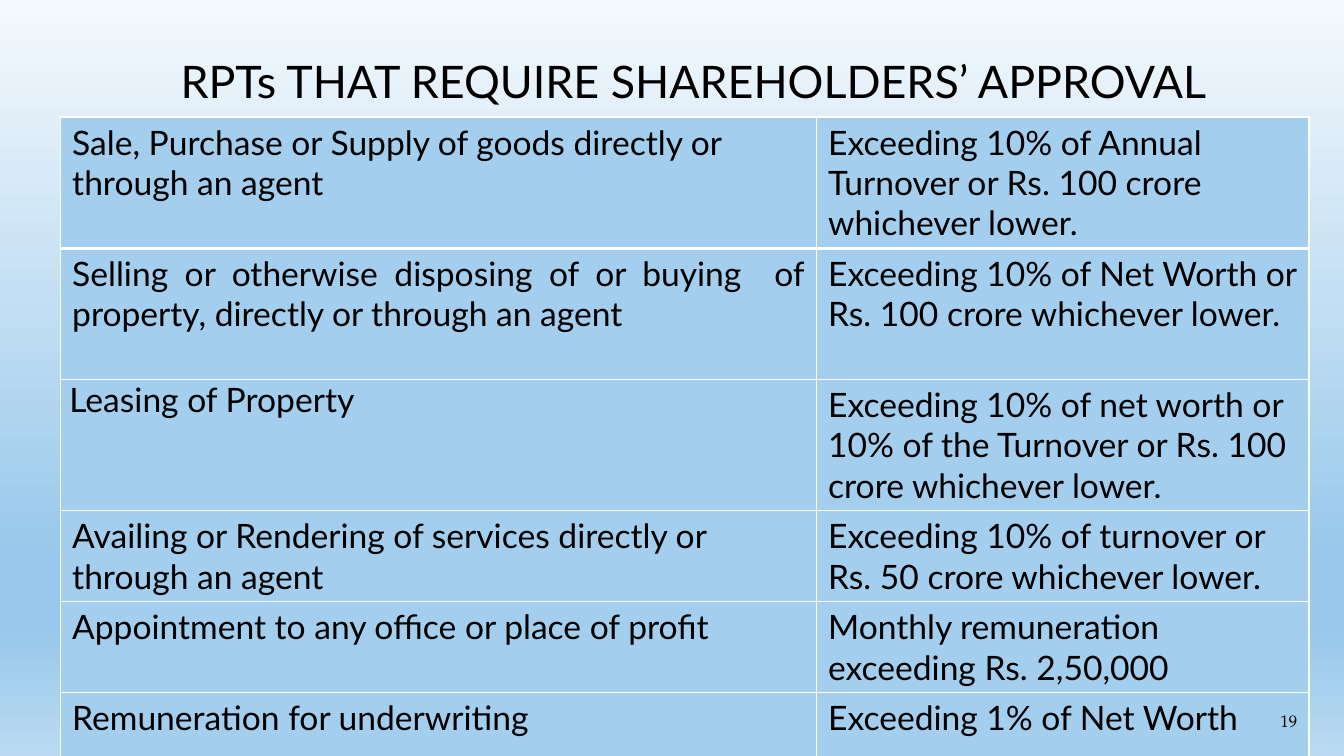
from dataclasses import dataclass
from typing import Optional

from lxml.etree import SubElement
from pptx import Presentation
from pptx.dml.color import RGBColor as Rgb
from pptx.enum.text import MSO_ANCHOR as Anchor, PP_ALIGN as Align
from pptx.oxml.ns import qn
from pptx.util import Cm, Pt

COLORS = {
    "ink": "000000",
    "cell": "A3CEED",
    "line": "FFFFFF",
    "top": "F4F9FD",
    "mid": "98C8EB",
    "base": "BADAF2",
}
STOPS = [(0, "top"), (74, "mid"), (83, "mid"), (100, "base")]
WIDE = (0.3, 0.13)
TIGHT = (0.23, 0)
BOX = (0.33, 0.18)


@dataclass
class Row:
    deal: str
    limit: str
    height: float
    align: Optional[Align] = None
    pad: tuple[float, float] = WIDE


ROWS = [
    Row("Sale, Purchase or Supply of goods directly or through an agent",
        "Exceeding 10% of Annual Turnover or Rs. 100 crore whichever lower.", 3.3),
    Row("Selling or otherwise disposing of or buying  of property, directly or through an agent",
        "Exceeding 10% of Net Worth or Rs. 100 crore whichever lower.", 3.3,
        align=Align.JUSTIFY),
    Row("Leasing of Property",
        "Exceeding 10% of net worth or 10% of the Turnover or Rs. 100 crore whichever lower.",
        3.3, pad=TIGHT),
    Row("Availing or Rendering of services directly or through an agent",
        "Exceeding 10% of turnover or Rs. 50 crore whichever lower.", 2.29),
    Row("Appointment to any office or place of profit",
        "Monthly remuneration exceeding Rs. 2,50,000", 2.29),
    Row("Remuneration for underwriting", "Exceeding 1% of Net Worth", 1.62),
]


def write(frame, text: str, *, size: float = 24, font: str = "Lato",
          align: Optional[Align] = None) -> None:
    para = frame.paragraphs[0]
    para.alignment = align
    run = para.add_run()
    run.text = text
    run.font.size = Pt(size)
    run.font.name = font
    run.font.color.rgb = Rgb.from_string(COLORS["ink"])


def set_pad(area, pad: tuple[float, float]) -> None:
    side, edge = pad
    area.margin_left = area.margin_right = Cm(side)
    area.margin_top = area.margin_bottom = Cm(edge)


def add_box(slide, place: tuple, text: str, anchor: Anchor, **style) -> None:
    frame = slide.shapes.add_textbox(*map(Cm, place)).text_frame
    frame.word_wrap = True
    frame.vertical_anchor = anchor
    set_pad(frame, BOX)
    write(frame, text, **style)


def add_hue(parent, name: str) -> None:
    fill = parent
    SubElement(fill, qn("a:srgbClr"), val=COLORS[name])


def paint(slide) -> None:
    fill = slide.background.fill
    fill.gradient()
    fill.gradient_angle = 270
    grad = slide.background._cSld.find(".//" + qn("a:gsLst"))
    for stop in list(grad):
        grad.remove(stop)
    for pos, name in STOPS:
        add_hue(SubElement(grad, qn("a:gs"), pos=str(pos * 1000)), name)


def add_edges(cell, top: float, base: float) -> None:
    props = cell._tc.get_or_add_tcPr()
    edges = {"a:lnL": 1, "a:lnR": 1, "a:lnT": top, "a:lnB": base}
    for spot, (tag, width) in enumerate(edges.items()):
        line = SubElement(props, qn(tag), w=str(Pt(width)))
        add_hue(SubElement(line, qn("a:solidFill")), "line")
        props.insert(spot, line)


def fill_cell(cell, text: str, index: int, pad: tuple[float, float],
              align: Optional[Align] = None) -> None:
    set_pad(cell, pad)
    cell.fill.solid()
    cell.fill.fore_color.rgb = Rgb.from_string(COLORS["cell"])
    add_edges(cell, 3 if index == 1 else 1, 3 if index == 0 else 1)
    write(cell.text_frame, text, align=align)


def add_grid(slide) -> None:
    widths = (19.05, 12.42)
    high = sum(row.height for row in ROWS)
    place = (1.52, 2.95, sum(widths), high)
    grid = slide.shapes.add_table(len(ROWS), len(widths), *map(Cm, place)).table
    grid.first_row = grid.horz_banding = False
    for col, width in zip(grid.columns, widths):
        col.width = Cm(width)
    for index, row in enumerate(ROWS):
        grid.rows[index].height = Cm(row.height)
        fill_cell(grid.cell(index, 0), row.deal, index, row.pad, row.align)
        fill_cell(grid.cell(index, 1), row.limit, index, WIDE)


def main() -> None:
    deck = Presentation()
    deck.slide_width, deck.slide_height = Cm(33.87), Cm(19.05)
    slide = deck.slides.add_slide(deck.slide_layouts[6])
    paint(slide)
    add_box(slide, (4.22, 0.99, 27.08, 1.9),
            "RPTs THAT REQUIRE SHAREHOLDERS’ APPROVAL", Anchor.BOTTOM, size=32)
    add_grid(slide)
    add_box(slide, (30.76, 17.91, 2.26, 0.51), "19", Anchor.MIDDLE,
            size=12, font="TeX Gyre Pagella", align=Align.RIGHT)
    deck.save("out.pptx")


if __name__ == "__main__":
    main()
